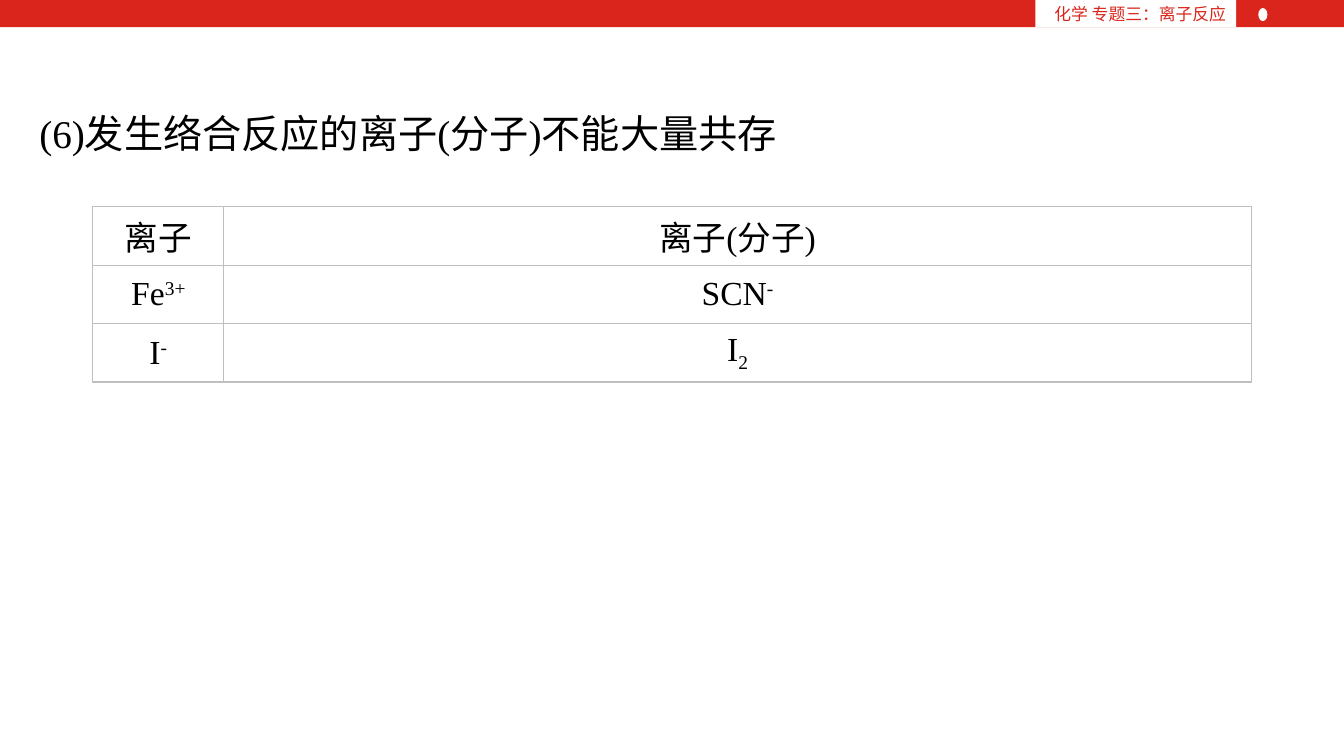
from dataclasses import dataclass

from lxml.etree import SubElement
from pptx import Presentation
from pptx.dml.color import RGBColor
from pptx.enum.shapes import MSO_SHAPE
from pptx.enum.text import MSO_ANCHOR, MSO_AUTO_SIZE, PP_ALIGN
from pptx.oxml.ns import qn
from pptx.util import Inches, Pt


@dataclass(frozen=True)
class Theme:
    font: str = "Times New Roman"
    red: str = "DA251C"
    white: str = "FFFFFF"
    black: str = "000000"
    grid: str = "BFBFBF"
    title: int = 28
    body: int = 24
    label: int = 12
    grid_width: int = 1


THEME = Theme()
SLIDE_W, SLIDE_H = 13.33, 7.5
ROWS = [
    [[("离子", 0)], [("离子(分子)", 0)]],
    [[("Fe", 0), ("3+", 30)], [("SCN", 0), ("-", 30)]],
    [[("I", 0), ("-", 30)], [("I", 0), ("2", -25)]],
]


def set_attrs(obj, values):
    for name, value in values.items():
        setattr(obj, name, value)


def add_run(p, text, size, color, baseline=0):
    r = p.add_run()
    r.text = text
    set_attrs(r.font, {"name": THEME.font, "size": Pt(size), "bold": False})
    r.font.color.rgb = RGBColor.from_string(color)
    if baseline:
        r._r.get_or_add_rPr().set("baseline", str(baseline * 1000))


def add_block(s, box, color, kind=MSO_SHAPE.RECTANGLE):
    sp = s.shapes.add_shape(kind, *map(Inches, box))
    sp.shadow.inherit = False
    sp.fill.solid()
    sp.fill.fore_color.rgb = RGBColor.from_string(color)
    sp.line.fill.background()
    return sp


def add_header(s, box, text):
    left, top, width, height = box
    add_block(s, box, THEME.red)
    label_w, right_gap = 1.99, 1.07
    label_right = left + width - right_gap
    add_block(s, (label_right + 0.22, top + 0.08, 0.09, 0.13), THEME.white, MSO_SHAPE.OVAL)
    sp = add_block(s, (label_right - label_w, top, label_w, height), THEME.white)
    tf = sp.text_frame
    set_attrs(tf, {"word_wrap": True, "vertical_anchor": MSO_ANCHOR.MIDDLE})
    p = tf.paragraphs[0]
    p.alignment = PP_ALIGN.RIGHT
    add_run(p, text, THEME.label, THEME.red)


def add_title(s, box, text):
    sp = s.shapes.title
    set_attrs(sp, dict(zip(("left", "top", "width", "height"), map(Inches, box))))
    tf = sp.text_frame
    set_attrs(tf, {"word_wrap": True, "auto_size": MSO_AUTO_SIZE.NONE,
                   "vertical_anchor": MSO_ANCHOR.TOP})
    p = tf.paragraphs[0]
    set_attrs(p, {"alignment": PP_ALIGN.LEFT, "line_spacing": 1.5})
    add_run(p, text, THEME.title, THEME.black)


def add_borders(cell):
    tc_pr = cell._tc.get_or_add_tcPr()
    for side in ("lnL", "lnR", "lnT", "lnB"):
        ln = SubElement(tc_pr, qn(f"a:{side}"), w=str(Pt(THEME.grid_width)))
        fill = SubElement(ln, qn("a:solidFill"))
        SubElement(fill, qn("a:srgbClr"), val=THEME.grid)


def format_cell(cell, runs):
    add_borders(cell)
    cell.fill.background()
    set_attrs(cell, {"margin_left": 0, "margin_right": 0, "margin_top": 0,
                     "margin_bottom": 0, "vertical_anchor": MSO_ANCHOR.MIDDLE})
    p = cell.text_frame.paragraphs[0]
    p.alignment = PP_ALIGN.CENTER
    for text, baseline in runs:
        add_run(p, text, THEME.body, THEME.black, baseline)


def add_ion_table(s, box, rows):
    left, top, width, height = box
    table = s.shapes.add_table(len(rows), len(rows[0]), *map(Inches, box)).table
    set_attrs(table, {"first_row": False, "horz_banding": False})
    ion_w = 1.3
    for col, col_w in zip(table.columns, (ion_w, width - ion_w)):
        col.width = Inches(col_w)
    for row, contents in zip(table.rows, rows):
        row.height = Inches(height / len(rows))
        for cell, runs in zip(row.cells, contents):
            format_cell(cell, runs)


def main():
    prs = Presentation()
    set_attrs(prs, {"slide_width": Inches(SLIDE_W), "slide_height": Inches(SLIDE_H)})
    s = prs.slides.add_slide(prs.slide_layouts[5])
    add_header(s, (0, 0, SLIDE_W, 0.27), "化学 专题三：离子反应")
    add_title(s, (0.29, 0.8, 12.77, 0.72), "(6)发生络合反应的离子(分子)不能大量共存")
    add_ion_table(s, (0.92, 2.05, 11.49, 1.74), ROWS)
    prs.save("out.pptx")


if __name__ == "__main__":
    main()
